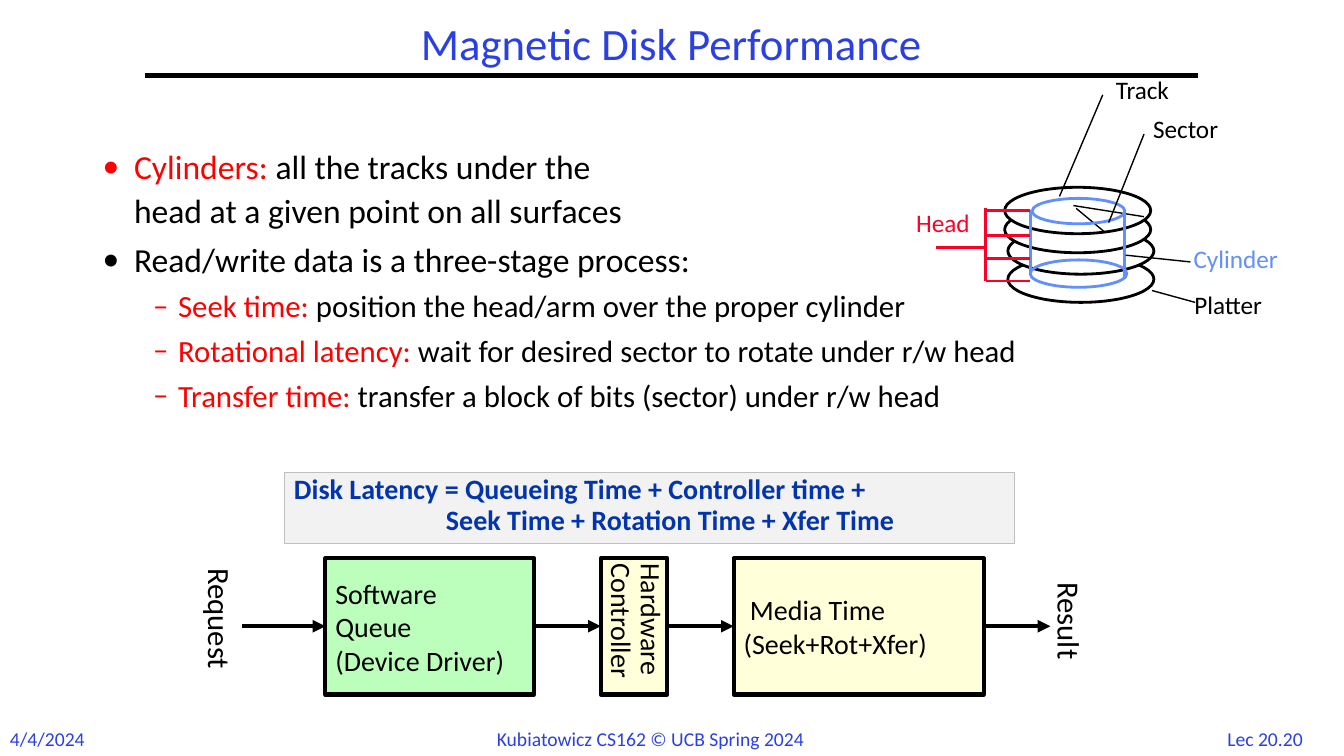
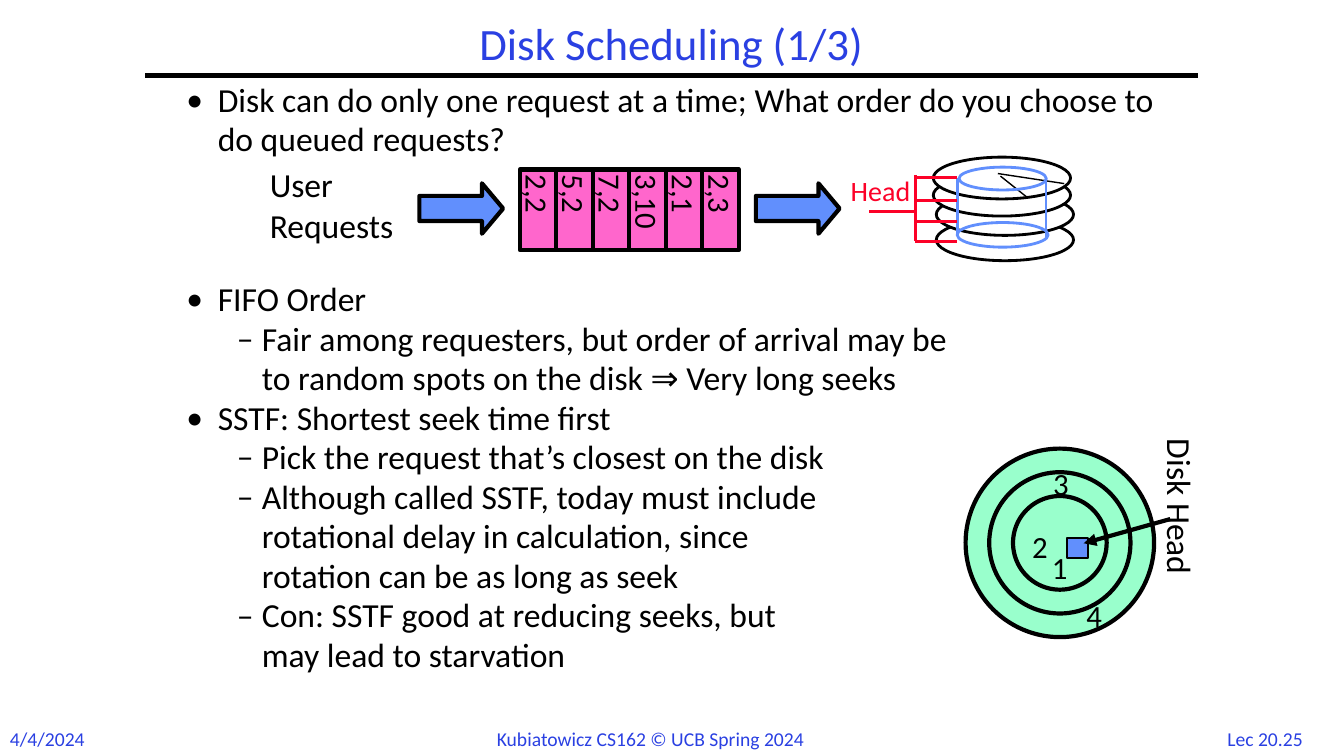
from dataclasses import dataclass

import pptx
import pptx.dml.color
import pptx.enum.shapes
import pptx.enum.text
import pptx.oxml.ns
import pptx.oxml.xmlchemy
import pptx.shapes.base
import pptx.slide
import pptx.text.text
import pptx.util
from lxml import etree

Cm = pptx.util.Cm
Pt = pptx.util.Pt
Kind = pptx.enum.shapes.MSO_SHAPE
Align = pptx.enum.text.PP_ALIGN
Anchor = pptx.enum.text.MSO_ANCHOR
Slide = pptx.slide.Slide

COLORS = {
    "black": "000000", "white": "FFFFFF", "title": "2A40E2", "red": "FF0000",
    "head": "FC0128", "blue": "618FFD", "navy": "0234AD", "gray": "F2F2F2",
    "edge": "BFBFBF", "green": "BCFFBC", "cream": "FFFFDA", "pink": "FF66CC",
    "mint": "99FFCC",
}
FONT = "Calibri"
WIDE, TIGHT = (0.25, 0.13), (0.18, 0.08)  # text insets: sides, top and bottom


@dataclass
class Box:
    x: float
    y: float
    w: float
    h: float


@dataclass
class Para:
    text: str
    lead: str = ""  # opening words in red
    size: float = 24
    color: str = "black"
    bold: bool = False
    bullet: str = ""
    left: float = 0
    hang: float = 0
    line: float = 1
    before: float = 0
    align: Align = Align.LEFT


@dataclass
class Label:
    text: str
    box: Box
    color: str = "black"
    size: float = 18


def hue(name: str) -> pptx.dml.color.RGBColor:
    return pptx.dml.color.RGBColor.from_string(COLORS[name])


def add_tag(parent: etree._Element, tag: str, **attrs: str) -> None:
    node = etree.SubElement(parent, pptx.oxml.ns.qn(tag))
    for key, val in attrs.items():
        node.set(key, val)


# Text
def add_runs(para: pptx.text.text._Paragraph, text: str, item: Para, color: str) -> None:
    for num, part in enumerate(text.split("\n")):
        if num:
            para.add_line_break()
        run = para.add_run()
        run.text = part
        form = {"name": FONT, "size": Pt(item.size), "bold": item.bold}
        for key, val in form.items():
            setattr(run.font, key, val)
        run.font.color.rgb = hue(color)


def set_text(shape: pptx.shapes.base.BaseShape, items: list[Para], wrap: bool = False,
             anchor: Anchor = Anchor.TOP, pad: tuple[float, float] = WIDE,
             vert: bool = False) -> None:
    frame = shape.text_frame
    side, edge = Cm(pad[0]), Cm(pad[1])
    form = {"word_wrap": wrap, "vertical_anchor": anchor, "margin_left": side,
            "margin_right": side, "margin_top": edge, "margin_bottom": edge}
    for key, val in form.items():
        setattr(frame, key, val)
    if vert:
        frame._txBody.bodyPr.set("vert", "eaVert")
    for num, item in enumerate(items):
        para = frame.add_paragraph() if num else frame.paragraphs[0]
        form = {"alignment": item.align, "line_spacing": item.line,
                "space_before": Pt(item.before)}
        for key, val in form.items():
            setattr(para, key, val)
        props = para._p.get_or_add_pPr()
        props.set("marL", str(Cm(item.left)))
        props.set("indent", str(Cm(-item.hang)))
        if item.bullet:
            add_tag(props, "a:buFont", typeface=FONT)
            add_tag(props, "a:buChar", char=item.bullet)
        if item.lead:
            add_runs(para, item.lead, item, "red")
        add_runs(para, item.text, item, item.color)


def add_text(slide: Slide, box: Box, items: list[Para], turn: float = 0, wrap: bool = False,
             anchor: Anchor = Anchor.TOP, pad: tuple[float, float] = WIDE) -> None:
    shape = slide.shapes.add_textbox(Cm(box.x), Cm(box.y), Cm(box.w), Cm(box.h))
    shape.rotation = turn
    set_text(shape, items, wrap, anchor, pad)


def add_label(slide: Slide, label: Label) -> None:
    item = Para(label.text, size=label.size, color=label.color, line=0.85)
    add_text(slide, label.box, [item], pad=TIGHT)


def point(text: str, lead: str = "", **form: float) -> Para:
    return Para(text, lead, bullet="•", left=0.79, hang=0.79, **form)


def dash(text: str, lead: str = "", **form: float) -> Para:
    return Para(text, lead, bullet="–", left=1.9, hang=0.63, **form)


# Shapes and lines
def add_shape(slide: Slide, kind: Kind, box: Box, fill: str = "", edge: str = "black",
              width: float = 3) -> pptx.shapes.base.BaseShape:
    shape = slide.shapes.add_shape(kind, Cm(box.x), Cm(box.y), Cm(box.w), Cm(box.h))
    shape.shadow.inherit = False
    if fill:
        shape.fill.solid()
        shape.fill.fore_color.rgb = hue(fill)
    else:
        shape.fill.background()
    shape.line.color.rgb = hue(edge)
    shape.line.width = Pt(width)
    return shape


def add_line(slide: Slide, x1: float, y1: float, x2: float, y2: float, color: str = "black",
             width: float = 1, arrow: bool = False) -> None:
    line = slide.shapes.add_connector(pptx.enum.shapes.MSO_CONNECTOR.STRAIGHT,
                                      Cm(x1), Cm(y1), Cm(x2), Cm(y2))
    line.line.color.rgb = hue(color)
    line.line.width = Pt(width)
    if arrow:
        add_tag(line.line._get_or_add_ln(), "a:tailEnd", type="triangle")
    add_tag(line._element.spPr, "a:effectLst")


def add_disk(slide: Slide, x: float, y: float, sx: float = 1, sy: float = 1) -> None:
    def oval(box: Box, fill: str, edge: str) -> None:
        place = Box(x + box.x * sx, y + box.y * sy, box.w * sx, box.h * sy)
        add_shape(slide, Kind.OVAL, place, fill, edge, 2)

    def line(x1: float, y1: float, x2: float, y2: float, color: str, width: float = 2) -> None:
        add_line(slide, x + x1 * sx, y + y1 * sy, x + x2 * sx, y + y2 * sy, color, width)

    # Platters, bottom one first, and the sector on top
    for left, top in ((0.08, 1.73), (0.08, 1.02), (0, 0.48), (0, 0)):
        oval(Box(left, top, 3.68, 1.17), "white", "black")
    line(1.8, 0.53, 2.51, 1.12, "black", 1)
    line(1.73, 0.46, 3.51, 0.74, "black", 1)
    # Cylinder
    oval(Box(0.64, 1.83, 2.44, 0.69), "", "blue")
    oval(Box(0.69, 0.28, 2.34, 0.64), "", "blue")
    line(0.64, 0.58, 0.64, 2.16, "blue")
    line(3.02, 0.58, 3.02, 2.29, "blue")
    # Heads on their arm
    line(-0.48, 0.51, -0.48, 2.36, "head")
    for top in (0.58, 1.22, 1.8, 2.36):
        line(-0.48, top, 0.64, top, "head")
    line(-0.46, 1.52, -1.73, 1.52, "head")


# Parts that all slides share
def add_slide(deck: pptx.presentation.Presentation, title: str, page: str) -> Slide:
    slide = deck.slides.add_slide(deck.slide_layouts[6])
    head = Para(title, size=32, color="title", line=0.9, align=Align.CENTER)
    add_text(slide, Box(3.66, 0.43, 26.52, 1.47), [head], wrap=True, anchor=Anchor.MIDDLE)
    add_line(slide, 3.66, 1.9, 30.2, 1.9, width=3)
    for text, left, width in (("4/4/2024", 0, 2.44),
                              ("Kubiatowicz CS162 © UCB Spring 2024", 12.27, 9.35),
                              (page, 30.68, 2.74)):
        add_text(slide, Box(left, 18.19, width, 0.86), [Para(text, size=14, color="title")])
    return slide


def draw_speed(deck: pptx.presentation.Presentation) -> None:
    slide = add_slide(deck, "Magnetic Disk Performance", "Lec 20.20")
    main = {"line": 1.1, "before": 3}
    sub = {**main, "size": 22}
    add_text(slide, Box(2.34, 3.45, 29.21, 8.33), [
        point("all the tracks under the\nhead at a given point on all surfaces",
              "Cylinders: ", **main),
        point("Read/write data is a three-stage process:", **main),
        dash("position the head/arm over the proper cylinder", "Seek time: ", **sub),
        dash("wait for desired sector to rotate under r/w head", "Rotational latency: ", **sub),
        dash("transfer a block of bits (sector) under r/w head", "Transfer time: ", **sub),
    ], wrap=True)

    # Disk with its labels
    add_disk(slide, 25.32, 4.72)
    for ends in ((27.94, 5.61, 28.83, 3.38), (26.7, 4.95, 27.79, 2.39),
                 (28.37, 6.43, 30, 6.6), (29.03, 7.32, 30.12, 7.62)):
        add_line(slide, *ends)
    for label in (Label("Sector", Box(28.88, 2.9, 2.21, 0.79)),
                  Label("Track", Box(27.94, 1.9, 1.93, 0.79)),
                  Label("Cylinder", Box(29.9, 6.17, 2.72, 0.79), "blue"),
                  Label("Platter", Box(29.92, 7.32, 2.21, 0.79)),
                  Label("Head", Box(22.91, 5.26, 1.88, 0.79), "head")):
        add_label(slide, label)

    # Flow from request to result
    top, high, mid = 14.07, 3.43, 15.78
    start = 6.1
    for left, width, fill, lines, vert in (
            (8.2, 5.26, "green", ("Software", "Queue", "(Device Driver)"), False),
            (15.14, 1.68, "cream", ("Hardware", "Controller"), True),
            (18.49, 6.3, "cream", (" Media Time", "(Seek+Rot+Xfer)"), False)):
        shape = add_shape(slide, Kind.RECTANGLE, Box(left, top, width, high), fill)
        form = {"line": 0.8, "before": 2} if vert else {}
        set_text(shape, [Para(text, size=20, **form) for text in lines],
                 anchor=Anchor.MIDDLE, vert=vert)
        add_line(slide, start, mid, left, mid, width=3, arrow=True)
        start = left + width
    add_line(slide, start, mid, 26.47, mid, width=3, arrow=True)
    for text, left, width in (("Request", 3.84, 3.43), ("Result", 25.6, 2.72)):
        add_text(slide, Box(left, 15.19, width, 1.19), [Para(text, size=22)], turn=90)

    # Latency formula
    shape = add_shape(slide, Kind.RECTANGLE, Box(7.16, 11.91, 18.42, 1.78), "gray", "edge", 0.75)
    form = {"size": 20, "color": "navy", "bold": True, "line": 0.8, "before": 3}
    set_text(shape, [Para("Disk Latency = Queueing Time + Controller time +", **form),
                     Para("Seek Time + Rotation Time + Xfer Time", left=3.83, **form)], wrap=True)


def draw_queue(deck: pptx.presentation.Presentation) -> None:
    slide = add_slide(deck, "Disk Scheduling (1/3)", "Lec 20.25")
    form = {"line": 0.98}
    add_text(slide, Box(4.45, 1.9, 25.2, 16.71), [
        point("Disk can do only one request at a time; What order do you choose to "
              "do queued requests?", **form),
        point("FIFO Order", before=86, **form),
        dash("Fair among requesters, but order of arrival may be\n"
             "to random spots on the disk ⇒ Very long seeks", **form),
        point("SSTF: Shortest seek time first", **form),
        dash("Pick the request that’s closest on the disk", **form),
        dash("Although called SSTF, today must include\n"
             "rotational delay in calculation, since\nrotation can be as long as seek", **form),
        dash("Con: SSTF good at reducing seeks, but\nmay lead to starvation", **form),
    ], wrap=True)

    # Queue of requests
    add_text(slide, Box(6.55, 4.01, 4.11, 2.31), [Para("User"), Para("Requests")])
    step = 0.92
    for num, text in enumerate(("2,2", "5,2", "7,2", "3,10", "2,1", "2,3")):
        cell = add_shape(slide, Kind.RECTANGLE, Box(13.1 + num * step, 4.27, step, 2.03), "pink")
        set_text(cell, [Para(text, size=22)], anchor=Anchor.MIDDLE, vert=True)
    for left in (10.57, 19.05):
        arrow = add_shape(slide, Kind.RIGHT_ARROW, Box(left, 4.62, 2.11, 1.27), "blue")
        arrow.adjustments[1] = 0.42
    add_disk(slide, 23.52, 3.96, 0.94, 0.9)
    add_label(slide, Label("Head", Box(21.26, 4.42, 2.06, 0.86), "head", 20))

    # Disk from above, with the order of seeks
    for size in (4.75, 3.56, 2.36):
        ring = Box(26.71 - size / 2, 13.68 - size / 2, size, size)
        add_shape(slide, Kind.OVAL, ring, "mint")
    add_shape(slide, Kind.RECTANGLE, Box(26.9, 13.56, 0.53, 0.51), "blue", width=1.5)
    for text, left, top in (("1", 26.26, 13.69), ("2", 25.76, 13.18),
                            ("3", 26.29, 11.58), ("4", 27.13, 14.91)):
        add_text(slide, Box(left, top, 0.94, 1.19), [Para(text, size=22)])
    add_text(slide, Box(27.53, 12.4, 4.45, 1.27), [Para("Disk Head")], turn=90)
    add_line(slide, 29.49, 13.08, 27.31, 13.69, width=3, arrow=True)


def main() -> None:
    deck = pptx.Presentation()
    deck.slide_width, deck.slide_height = Cm(33.87), Cm(19.05)
    draw_speed(deck)
    draw_queue(deck)
    deck.save("out.pptx")


if __name__ == "__main__":
    main()
